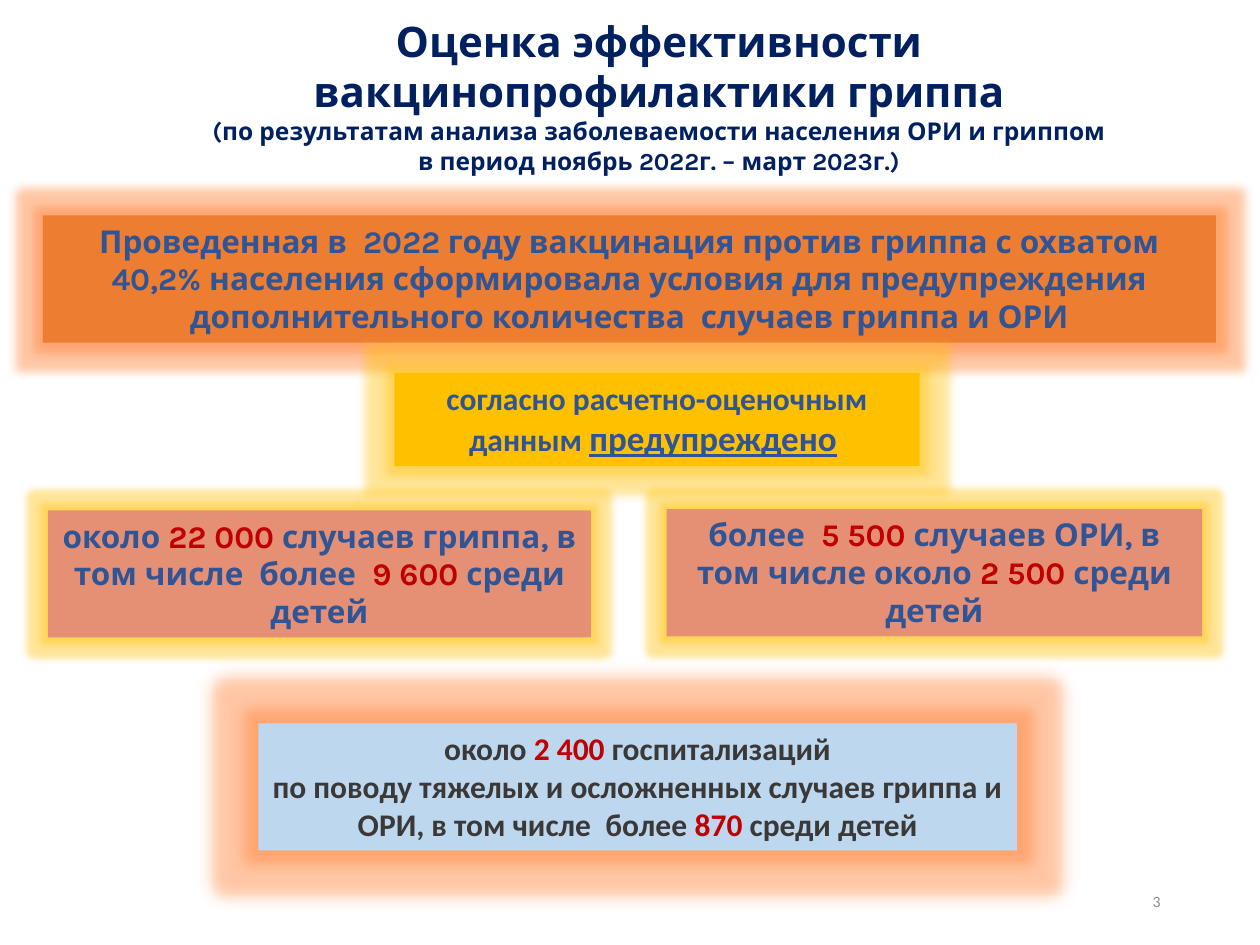
from lxml.etree import SubElement
from pptx import Presentation
from pptx.dml.color import RGBColor
from pptx.enum.shapes import MSO_SHAPE as SHAPE
from pptx.enum.text import MSO_ANCHOR as ANCHOR, MSO_AUTO_SIZE as FIT, PP_ALIGN as ALIGN
from pptx.oxml.ns import qn
from pptx.util import Inches, Pt

COLORS = {
    "navy": "002060", "blue": "2F5597", "red": "C00000", "dark": "3B3838",
    "orange": "ED7D31", "amber": "FFC000", "salmon": "E59074",
    "sky": "BDD7EE", "gray": "8C8C8C", "orange_glow": "FF7521",
}
COLS, ROWS = 100, 75
WIDTH, HEIGHT = Inches(10), Inches(7.5)


def grid(col, row, cols, rows):
    return (int(WIDTH * col / COLS), int(HEIGHT * row / ROWS),
            int(WIDTH * cols / COLS), int(HEIGHT * rows / ROWS))


def rgb(name):
    return RGBColor.from_string(COLORS[name])


def add_text(p, text, size=18, font="Karla", color="blue", bold=True, underline=None):
    r = p.add_run()
    r.text = text
    r.font.size, r.font.name = Pt(size), font
    r.font.bold, r.font.underline = bold, underline
    r.font.color.rgb = rgb(color)


def fill_text(tf, lines, align=ALIGN.CENTER, **base):
    tf.word_wrap = True
    for i, line in enumerate(lines):
        p = tf.paragraphs[0] if i == 0 else tf.add_paragraph()
        p.alignment = align
        for text, fmt in line:
            add_text(p, text, **{**base, **fmt})


def add_glow(sp, color, radius):
    effects = sp._element.spPr.find(qn("a:effectLst"))
    glow = SubElement(effects, qn("a:glow"), rad=str(Pt(radius)))
    clr = SubElement(glow, qn("a:srgbClr"), val=COLORS[color])
    SubElement(clr, qn("a:alpha"), val="40000")


def add_title(s, box):
    sp = s.shapes.title
    sp.left, sp.top, sp.width, sp.height = grid(*box)
    tf = sp.text_frame
    tf.auto_size, tf.vertical_anchor = FIT.NONE, ANCHOR.MIDDLE
    sizes = {
        "Оценка эффективности": 24,
        "вакцинопрофилактики гриппа": 24,
        "(по результатам анализа заболеваемости населения ОРИ и гриппом": 14,
        "в период ноябрь 2022г. – март 2023г.)": 14,
    }
    fill_text(tf, [[(text, {"size": size})] for text, size in sizes.items()], color="navy")


def add_panel(s, box, lines, fill, glow, radius, **base):
    sp = s.shapes.add_shape(SHAPE.RECTANGLE, *grid(*box))
    sp.shadow.inherit = False
    sp.fill.solid()
    sp.fill.fore_color.rgb = rgb(fill)
    sp.line.fill.background()
    add_glow(sp, glow, radius)
    sp.text_frame.vertical_anchor = ANCHOR.TOP
    fill_text(sp.text_frame, lines, **base)


def add_page_number(s, box, number):
    tf = s.shapes.add_textbox(*grid(*box)).text_frame
    tf.vertical_anchor = ANCHOR.MIDDLE
    fill_text(tf, [[(number, {})]], align=ALIGN.RIGHT,
              size=9, font="Calibri", color="gray", bold=False)


def main():
    prs = Presentation()
    prs.slide_width, prs.slide_height = WIDTH, HEIGHT
    s = prs.slides.add_slide(prs.slide_layouts[5])
    red = {"color": "red"}

    add_title(s, (5.9, 0, 92.8, 15.1))
    add_panel(s, (3.4, 17.1, 93.1, 10.1), [[
        ("Проведенная в  2022 году вакцинация против гриппа с охватом 40,2% населения "
         "сформировала условия для предупреждения дополнительного количества  "
         "случаев гриппа и ОРИ", {}),
    ]], "orange", "orange_glow", 11)
    add_panel(s, (3.8, 40.5, 43.1, 10.1), [[
        ("около ", {}), ("22 000 ", red), ("случаев гриппа, в том числе  более  ", {}),
        ("9 600 ", red), ("среди детей", {}),
    ]], "salmon", "amber", 8)
    add_panel(s, (52.9, 40.4, 42.5, 10.1), [[
        ("более  ", {}), ("5 500 ", red), ("случаев ОРИ, в том числе около ", {}),
        ("2 500 ", red), ("среди детей", {}),
    ]], "salmon", "amber", 8)
    add_panel(s, (20.5, 57.4, 60.2, 10.1), [
        [("около ", {}), ("2 400 ", red), ("госпитализаций", {})],
        [("по поводу тяжелых и осложненных случаев гриппа и ОРИ, в том числе  более ", {}),
         ("870", red), (" среди детей", {})],
    ], "sky", "orange_glow", 18, font="Calibri", color="dark")
    add_panel(s, (31.3, 29.6, 41.7, 7.4), [[
        ("согласно расчетно-оценочным данным ", {}),
        ("предупреждено", {"size": 20, "underline": True}), (" ", {"size": 20}),
    ]], "amber", "amber", 11, font="Calibri")
    add_page_number(s, (70.6, 69.5, 22.5, 4), "3")
    prs.save("out.pptx")


if __name__ == "__main__":
    main()
